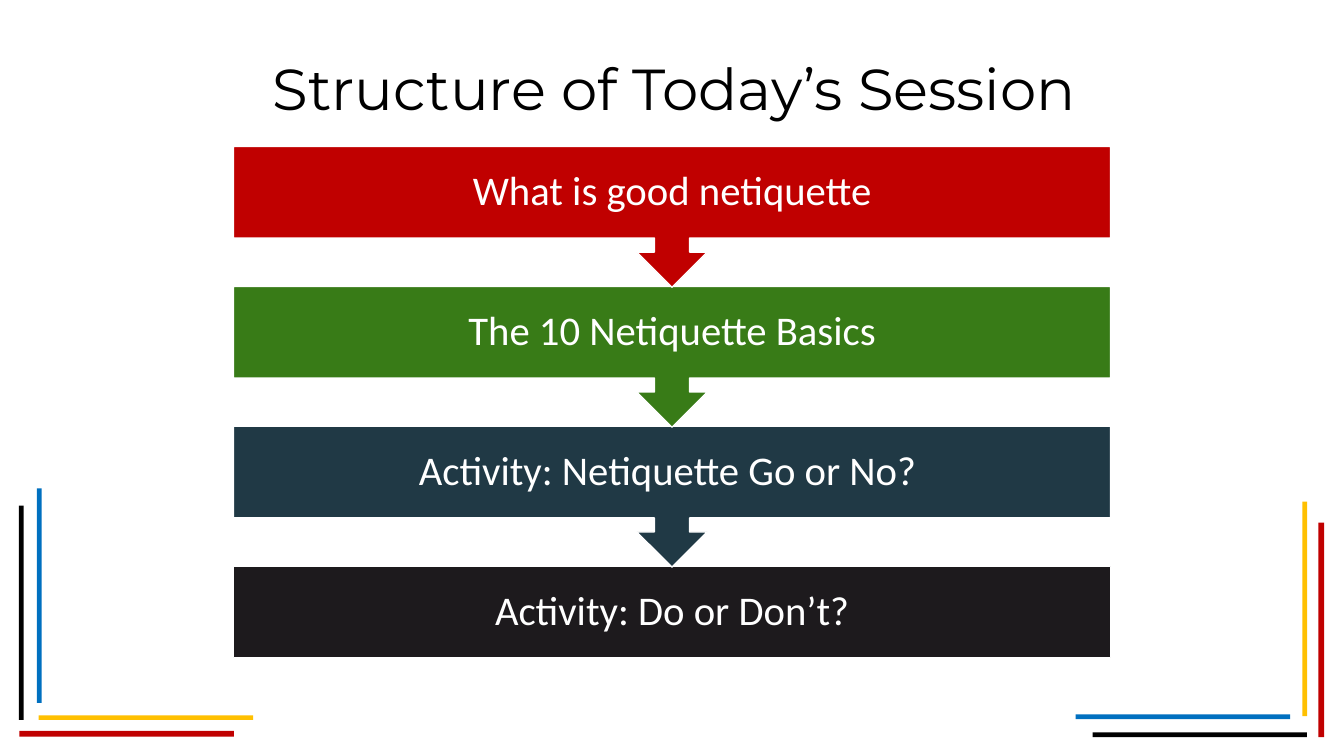
import pptx
import pptx.util
import pptx.dml.color
import pptx.enum.shapes
import pptx.enum.text

Pt = pptx.util.Pt
RGB = pptx.dml.color.RGBColor
KIND = pptx.enum.shapes.MSO_SHAPE

BLACK = RGB(0x00, 0x00, 0x00)
WHITE = RGB(0xFF, 0xFF, 0xFF)
RED = RGB(0xC0, 0x00, 0x00)
GOLD = RGB(0xFF, 0xC0, 0x00)
BLUE = RGB(0x00, 0x70, 0xC0)
GREEN = RGB(0x38, 0x7B, 0x17)
SLATE = RGB(0x20, 0x39, 0x45)
COAL = RGB(0x1D, 0x1A, 0x1D)

# Corner bars: left, top, upright or not, thickness, colour
LONG = 163.4
BARS = [
    (14.4, 385.2, True, 3.6, BLACK),
    (14.8, 556.9, False, 4.3, RED),
    (29.5, 545.0, False, 3.6, GOLD),
    (28.1, 372.2, True, 3.6, BLUE),
    (832.3, 558.0, False, 3.6, BLACK),
    (1004.4, 398.2, True, 4.3, RED),
    (992.2, 382.3, True, 3.6, GOLD),
    (819.4, 544.3, False, 3.6, BLUE),
]

# Steps, from top to bottom
STEPS = [
    ("What is good netiquette", RED),
    ("The 10 Netiquette Basics", GREEN),
    ("Activity: Netiquette Go or No? ", SLATE),
    ("Activity: Do or Don’t?", COAL),
]
LEFT, TOP, WIDE = 177.8, 111.6, 668.2
PITCH, BAND, CALL = 106.6, 69.8, 107.3

# Text formats
TITLE = {"name": "Montserrat", "size": Pt(44)}
LABEL = {"name": "Calibri", "size": Pt(31)}


def put(item, values):
    for key, value in values.items():
        setattr(item, key, value)


def add_box(slide, kind, area, fill, edge=None):
    box = slide.shapes.add_shape(kind, *map(Pt, area))
    box.shadow.inherit = False
    box.fill.solid()
    box.fill.fore_color.rgb = fill
    if edge is None:
        box.line.fill.background()
    else:
        box.line.color.rgb = edge
        box.line.width = Pt(1)
    return box


def add_text(slide, text, area, style, color, space=1.0, pad=None):
    frame = slide.shapes.add_textbox(*map(Pt, area)).text_frame
    put(frame, {"word_wrap": True,
                "vertical_anchor": pptx.enum.text.MSO_ANCHOR.MIDDLE})
    if pad is not None:
        for side in ("left", "top", "right", "bottom"):
            setattr(frame, "margin_" + side, Pt(pad))
    para = frame.paragraphs[0]
    put(para, {"text": text, "line_spacing": space,
               "alignment": pptx.enum.text.PP_ALIGN.CENTER})
    put(para.font, style)
    para.font.color.rgb = color


def add_step(slide, row, text, fill):
    top = TOP + row * PITCH
    if row == len(STEPS) - 1:
        add_box(slide, KIND.RECTANGLE, (LEFT, top, WIDE, BAND), fill, WHITE)
    else:
        box = add_box(slide, KIND.UP_ARROW_CALLOUT,
                      (LEFT, top, WIDE, CALL), fill, WHITE)
        box.rotation = 180
    # The label stays upright over the band
    add_text(slide, text, (LEFT, top, WIDE, BAND), LABEL, WHITE, 0.9, 17.3)


def main():
    deck = pptx.Presentation()
    put(deck, {"slide_width": Pt(1023.84), "slide_height": Pt(576)})
    slide = deck.slides.add_slide(deck.slide_layouts[6])

    # Corner bars
    for left, top, tall, thick, color in BARS:
        size = (thick, LONG) if tall else (LONG, thick)
        add_box(slide, KIND.RECTANGLE, (left, top, *size), color)

    # Title
    add_text(slide, "Structure of Today’s Session",
             (48.2, 21.6, 931.7, 90), TITLE, BLACK)

    # Steps, lowest first so each arrow lies over the next band
    for row, (text, fill) in reversed(list(enumerate(STEPS))):
        add_step(slide, row, text, fill)

    deck.save("out.pptx")


if __name__ == "__main__":
    main()
